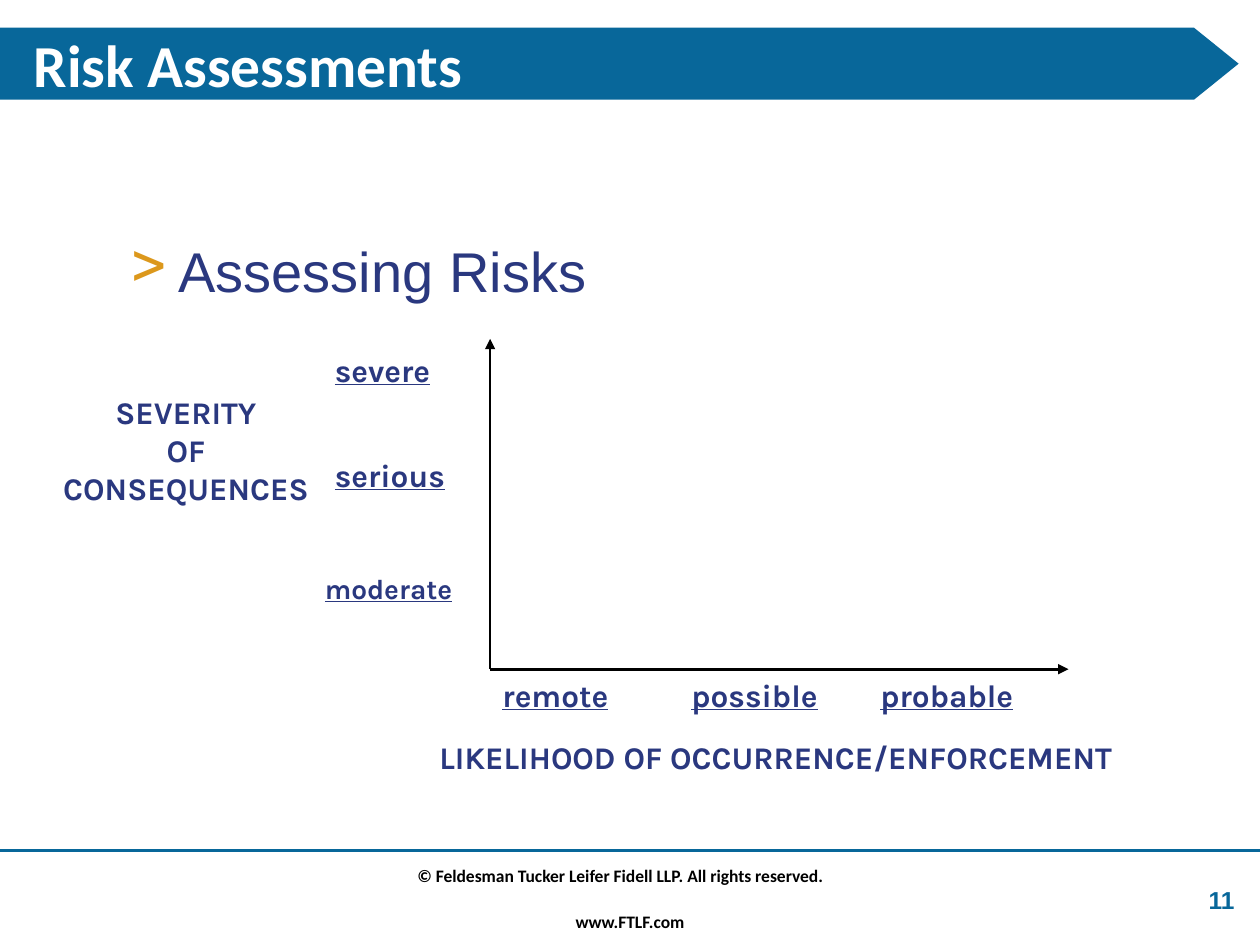
from lxml import etree
from pptx import Presentation
from pptx.dml.color import RGBColor
from pptx.enum import shapes, text
from pptx.oxml import ns
from pptx.util import Cm, Pt

COLORS = {"blue": "08679A", "navy": "2A387F", "gold": "DC981C",
          "black": "000000", "white": "FFFFFF"}
CENTER, RIGHT = text.PP_ALIGN.CENTER, text.PP_ALIGN.RIGHT


def color(name):
    return RGBColor.from_string(COLORS[name])


def add_xml(parent, tag, **attributes):
    return etree.SubElement(parent, ns.qn(tag), attributes)


def style(paragraph, font, size, color_name, bold=True, underline=None):
    for run in paragraph.runs:
        run.font.name = font
        run.font.size = Pt(size)
        run.font.bold = bold
        run.font.underline = underline
        run.font.color.rgb = color(color_name)


def add_text(slide, box, words, font="Karla", size=18, color_name="navy",
             align=None, anchor=text.MSO_ANCHOR.TOP, **emphasis):
    """Add a wrapped text box; box is left, top, width, height in cm."""
    shape = slide.shapes.add_textbox(*map(Cm, box))
    frame = shape.text_frame
    frame.word_wrap = True
    frame.vertical_anchor = anchor
    frame.text = words
    paragraph = frame.paragraphs[0]
    paragraph.alignment = align
    style(paragraph, font, size, color_name, **emphasis)
    return paragraph


def add_line(slide, start, end, color_name, arrow=False):
    line = slide.shapes.add_connector(
        shapes.MSO_CONNECTOR.STRAIGHT, *map(Cm, (*start, *end)))
    line.line.color.rgb = color(color_name)
    line.line.width = Pt(1.5)
    properties = line.element.spPr
    if arrow:
        add_xml(properties.find(ns.qn("a:ln")), "a:tailEnd", type="triangle")
    add_xml(properties, "a:effectLst")


def add_banner(slide, left, top, width, height):
    """Place the pointed band with the slide title on it."""
    band = slide.shapes.add_shape(
        shapes.MSO_SHAPE.PENTAGON, *map(Cm, (left, top, width, height)))
    band.adjustments[0] = 0.62
    band.shadow.inherit = False
    band.fill.solid()
    band.fill.fore_color.rgb = color("blue")
    band.line.fill.background()

    title = slide.shapes.title
    band.element.addnext(title.element)
    title.left, title.top = Cm(left + 0.43), Cm(top - 0.13)
    title.width, title.height = Cm(width - 1.27), Cm(height + 0.25)
    title.text_frame.text = "Risk Assessments"
    title.text_frame.vertical_anchor = text.MSO_ANCHOR.BOTTOM
    paragraph = title.text_frame.paragraphs[0]
    paragraph.alignment = text.PP_ALIGN.LEFT
    style(paragraph, "Calibri", 34, "white")


def add_heading(slide, left, top, width, height):
    paragraph = add_text(slide, (left, top, width, height), "Assessing Risks",
                         font="Arial", size=32, bold=False)
    properties = paragraph._p.get_or_add_pPr()
    properties.set("marL", str(Cm(0.96)))
    properties.set("indent", str(-Cm(0.96)))
    bullet_color = add_xml(properties, "a:buClr")
    add_xml(bullet_color, "a:srgbClr", val=COLORS["gold"])
    add_xml(properties, "a:buSzPct", val="110000")
    add_xml(properties, "a:buChar", char=">")


def add_risk_axes(slide, left, top, width, height):
    """Draw both axes in the box, with labels to its left and below it."""
    bottom = top + height
    add_line(slide, (left, bottom), (left, top), "black", arrow=True)
    add_line(slide, (left, bottom), (left + width, bottom), "black", arrow=True)

    add_text(slide, (left - 9.09, top + 0.97, 5.92, 2.57),
             "SEVERITY\vOF\vCONSEQUENCES", align=CENTER)
    levels = [("severe", 3.38, 0.13, 18), ("serious", 3.38, 2.24, 18),
              ("moderate", 3.58, 4.57, 16)]
    for level, offset, drop, size in levels:
        add_text(slide, (left - offset, top + drop, 3.81, 1.02), level,
                 size=size, underline=True)

    for index, chance in enumerate(["remote", "possible", "probable"]):
        add_text(slide, (left + index * 3.81, bottom + 0.02, 3.81, 1.02),
                 chance, underline=True)
    add_text(slide, (left - 1.27, bottom + 1.27, 15.88, 1.02),
             "LIKELIHOOD OF OCCURRENCE/ENFORCEMENT")


def add_footer(slide, left, top, width):
    add_line(slide, (left, top), (left + width, top), "blue")
    footer = {"font": "Calibri", "size": 10, "color_name": "black",
              "align": CENTER}
    add_text(slide, (left + 6.05, top + 0.17, 12.9, 0.69),
             "© Feldesman Tucker Leifer Fidell LLP. All rights reserved.",
             **footer)
    add_text(slide, (left + 10.16, top + 1.09, 5.08, 0.69), "www.FTLF.com",
             anchor=text.MSO_ANCHOR.MIDDLE, **footer)
    add_text(slide, (left + width - 1.73, top + 0.33, 1.47, 1.32), "11",
             font="Arial", size=14, color_name="blue", align=RIGHT,
             anchor=text.MSO_ANCHOR.MIDDLE)


def main():
    presentation = Presentation()
    presentation.slide_width, presentation.slide_height = Cm(25.4), Cm(19.05)
    slide = presentation.slides.add_slide(presentation.slide_layouts[5])
    add_banner(slide, 0, 0.56, 24.97, 1.45)
    add_heading(slide, 2.39, 4.65, 22.66, 1.63)
    add_risk_axes(slide, 9.88, 6.83, 11.66, 6.66)
    add_footer(slide, 0, 17.15, 25.4)
    presentation.save("out.pptx")


if __name__ == "__main__":
    main()
